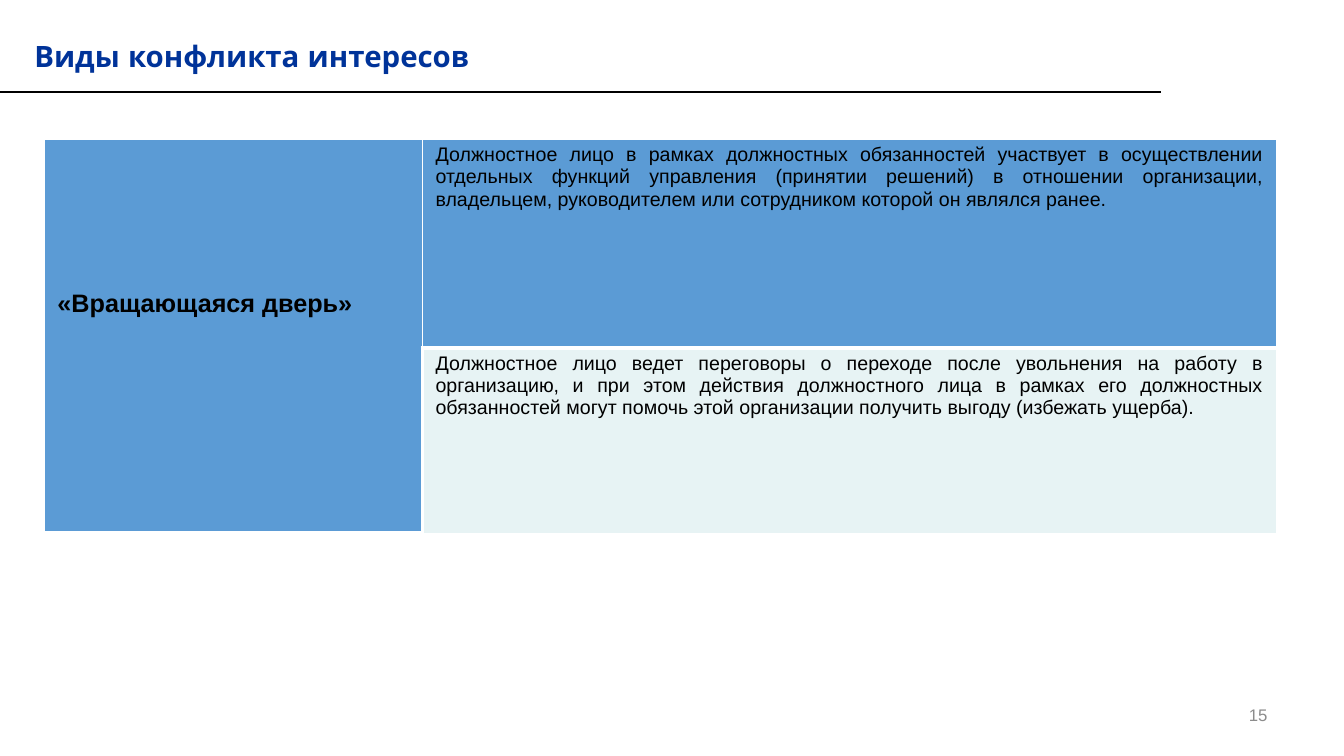
from dataclasses import dataclass

from pptx import Presentation
from pptx.dml.color import RGBColor
from pptx.enum.shapes import MSO_CONNECTOR as Connector
from pptx.enum.text import MSO_ANCHOR as Anchor, MSO_AUTO_SIZE as AutoSize, PP_ALIGN as Align
from pptx.oxml.ns import qn
from pptx.util import Inches, Pt
from lxml.etree import SubElement


@dataclass(frozen=True)
class Theme:
    title_font: str = "Quicksand"
    body_font: str = "Arial"
    title_color: str = "003399"
    text_color: str = "000000"
    number_color: str = "8C8C8C"
    strong_fill: str = "5B9BD5"
    pale_fill: str = "E7F3F4"
    border_color: str = "FFFFFF"
    title_size: int = 21
    label_size: int = 18
    body_size: int = 14
    number_size: int = 12
    thin: int = 1
    thick: int = 3


def set_all(target, values):
    for name, value in values.items():
        setattr(target, name, value)


class SlideBuilder:
    def __init__(self, deck, theme):
        self.theme = theme
        self.page = deck.slides.add_slide(deck.slide_layouts[5])

    def add_text(self, frame, text, size, color, font=None, bold=False, **para_format):
        para = frame.paragraphs[0]
        set_all(para, para_format)
        span = para.add_run()
        span.text = text
        set_all(span.font, {"name": font or self.theme.body_font, "size": Pt(size), "bold": bold})
        span.font.color.rgb = RGBColor.from_string(color)

    def title(self, text, left, top, width, height):
        box = self.page.shapes.title
        set_all(box, {"left": Inches(left), "top": Inches(top),
                      "width": Inches(width), "height": Inches(height)})
        set_all(box.text_frame, {"word_wrap": True, "auto_size": AutoSize.NONE,
                                 "vertical_anchor": Anchor.MIDDLE})
        self.add_text(box.text_frame, text, self.theme.title_size, self.theme.title_color,
                      self.theme.title_font, True, alignment=Align.LEFT, line_spacing=0.9)

    def rule(self, left, right, y):
        line = self.page.shapes.add_connector(
            Connector.STRAIGHT, Inches(left), Inches(y), Inches(right), Inches(y))
        line.line.width = Pt(1.5)
        line.line.color.rgb = RGBColor.from_string(self.theme.text_color)
        SubElement(line._element.spPr, qn("a:effectLst"))

    def page_number(self, text, left, top, width, height):
        box = self.page.shapes.add_textbox(*map(Inches, (left, top, width, height)))
        set_all(box.text_frame, {"word_wrap": True, "vertical_anchor": Anchor.MIDDLE})
        self.add_text(box.text_frame, text, self.theme.number_size, self.theme.number_color,
                      alignment=Align.RIGHT)

    def table(self, left, top, widths, heights):
        table = self.page.shapes.add_table(
            len(heights), len(widths),
            *map(Inches, (left, top, sum(widths), sum(heights)))).table
        for column, width in zip(table.columns, widths):
            column.width = Inches(width)
        for row, height in zip(table.rows, heights):
            row.height = Inches(height)
        return table

    def style_cell(self, cell, fill, borders, margin_top=0.05):
        """Borders are widths in points: left, right, top, bottom."""
        set_all(cell, {"margin_left": Inches(0.13), "margin_right": Inches(0.13),
                       "margin_top": Inches(margin_top), "margin_bottom": Inches(0.05),
                       "vertical_anchor": Anchor.TOP})
        properties = cell._tc.get_or_add_tcPr()
        for side, width in zip("LRTB", borders):
            line = SubElement(properties, qn(f"a:ln{side}"), w=str(Pt(width)))
            solid = SubElement(line, qn("a:solidFill"))
            SubElement(solid, qn("a:srgbClr"), val=self.theme.border_color)
        cell.fill.solid()
        cell.fill.fore_color.rgb = RGBColor.from_string(fill)

    def conflict_table(self, label, descriptions, left, top, widths, heights):
        """One label merged down the first column, one description per row."""
        theme = self.theme
        thin, thick = theme.thin, theme.thick
        table = self.table(left, top, widths, heights)
        fills = (theme.strong_fill, theme.pale_fill)
        borders = ((thin, thin, thin, thick), (thick, thin, thick, thin))
        for row, text in enumerate(descriptions):
            cell = table.cell(row, 1)
            self.style_cell(cell, fills[row], borders[row])
            self.add_text(cell.text_frame, text, theme.body_size, theme.text_color,
                          alignment=Align.JUSTIFY, space_after=Pt(6))
        head = table.cell(0, 0)
        head.merge(table.cell(len(heights) - 1, 0))
        self.style_cell(head, theme.strong_fill, borders[0], margin_top=1.49)
        self.add_text(head.text_frame, label, theme.label_size, theme.text_color, bold=True)


def main():
    deck = Presentation()
    set_all(deck, {"slide_width": Inches(13.33), "slide_height": Inches(7.5)})
    slide = SlideBuilder(deck, Theme())
    slide.page_number("15", 9.56, 6.83, 3.11, 0.52)
    slide.rule(0, 11.52, 0.91)
    slide.title("Виды конфликта интересов", 0.24, 0.26, 6.22, 0.63)
    slide.conflict_table(
        "«Вращающаяся дверь»",
        ["Должностное лицо в рамках должностных обязанностей участвует в осуществлении "
         "отдельных функций управления (принятии решений) в отношении организации, "
         "владельцем, руководителем или сотрудником которой он являлся ранее.",
         "Должностное лицо ведет переговоры о переходе после увольнения на работу в "
         "организацию, и при этом действия должностного лица в рамках его должностных "
         "обязанностей могут помочь этой организации получить выгоду (избежать ущерба)."],
        left=0.44, top=1.38, widths=(3.75, 8.47), heights=(2.07, 1.77))
    deck.save("out.pptx")


if __name__ == "__main__":
    main()
